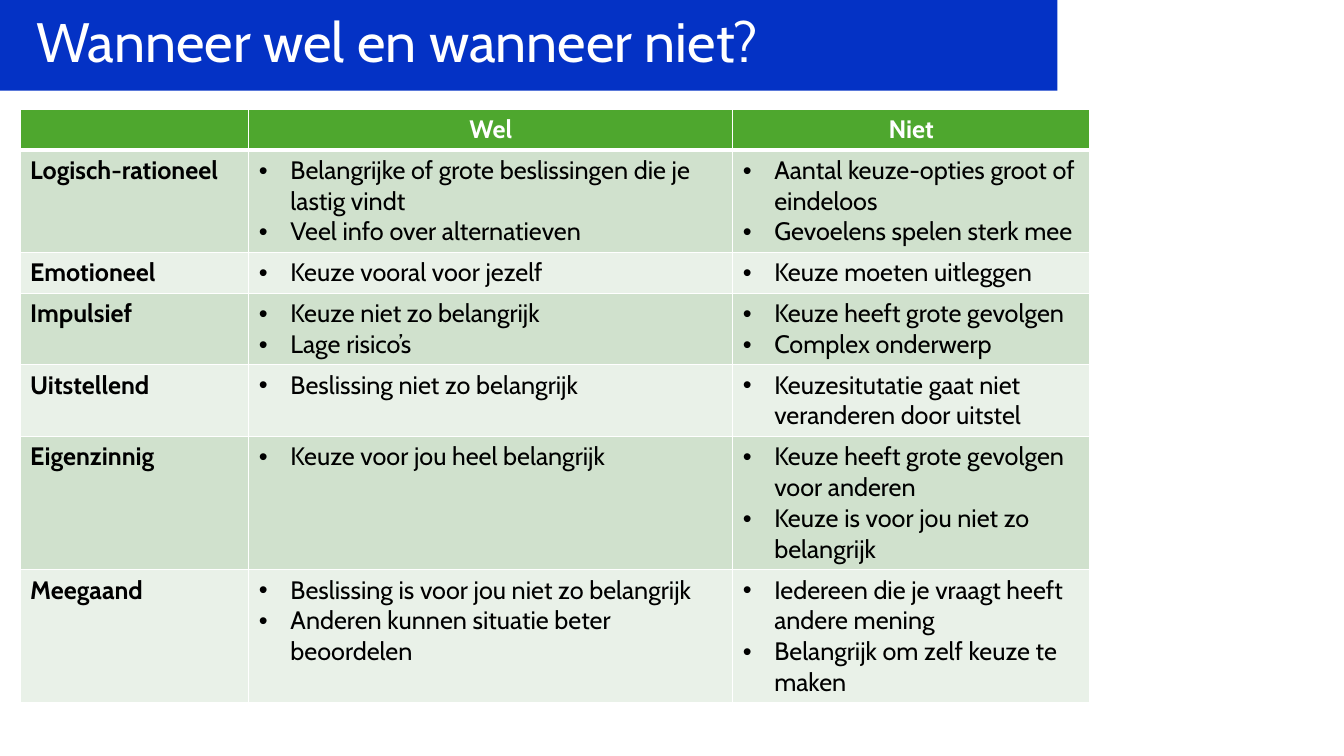
"""Build the slide on when each decision style fits and when it does not."""
from lxml.etree import SubElement
from pptx import Presentation
from pptx.dml.color import RGBColor
from pptx.enum.shapes import MSO_SHAPE as Shape
from pptx.enum.text import MSO_ANCHOR as Anchor, PP_ALIGN as Align
from pptx.oxml.ns import qn
from pptx.util import Pt

FONT = "Cabin"
COLORS = {"blue": "0432C5", "green": "4EA72E", "band": "D0E1CD",
          "pale": "E9F1E8", "white": "FFFFFF", "black": "000000"}
HEADINGS = ["", "Wel", "Niet"]
STYLES = [
    ("Logisch-rationeel",
     ["Belangrijke of grote beslissingen die je lastig vindt", "Veel info over alternatieven"],
     ["Aantal keuze-opties groot of eindeloos", "Gevoelens spelen sterk mee"]),
    ("Emotioneel", ["Keuze vooral voor jezelf"], ["Keuze moeten uitleggen"]),
    ("Impulsief",
     ["Keuze niet zo belangrijk", "Lage risico’s"],
     ["Keuze heeft grote gevolgen", "Complex onderwerp"]),
    ("Uitstellend",
     ["Beslissing niet zo belangrijk"],
     ["Keuzesitutatie gaat niet veranderen door uitstel"]),
    ("Eigenzinnig",
     ["Keuze voor jou heel belangrijk"],
     ["Keuze heeft grote gevolgen voor anderen", "Keuze is voor jou niet zo belangrijk"]),
    ("Meegaand",
     ["Beslissing is voor jou niet zo belangrijk", "Anderen kunnen situatie beter beoordelen"],
     ["Iedereen die je vraagt heeft andere mening", "Belangrijk om zelf keuze te maken"]),
]


def color(name):
    return RGBColor.from_string(COLORS[name])


def set_values(target, **values):
    for name, value in values.items():
        setattr(target, name, value)


def set_font(font, size, tint, bold=False):
    set_values(font, name=FONT, size=Pt(size), bold=bold)
    font.color.rgb = color(tint)


def add_title(page, text):
    bar = page.shapes.add_shape(Shape.RECTANGLE, Pt(0), Pt(0), Pt(755.3), Pt(64.8))
    bar.shadow.inherit = False
    bar.fill.solid()
    bar.fill.fore_color.rgb = color("blue")
    bar.line.fill.background()
    title = page.shapes.title
    bar.element.addnext(title.element)
    set_values(title, left=Pt(18.7), top=Pt(10.1), width=Pt(719.3), height=Pt(43.9))
    title.text_frame.text = text
    set_values(title.text_frame, vertical_anchor=Anchor.MIDDLE, word_wrap=True)
    para = title.text_frame.paragraphs[0]
    set_values(para, alignment=Align.LEFT, line_spacing=0.9)
    set_font(para.font, 39.6, "white")


def add_bullet(para):
    props = para._p.get_or_add_pPr()
    props.set("marL", str(Pt(22.5)))
    props.set("indent", str(-Pt(22.5)))
    SubElement(props, qn("a:buFont"), typeface="Arial")
    SubElement(props, qn("a:buChar"), char="•")


def style_cell(cell, fill, bottom=1):
    props = cell._tc.get_or_add_tcPr()
    for side, width in (("L", 1), ("R", 1), ("T", 1), ("B", bottom)):
        line = SubElement(props, qn(f"a:ln{side}"), w=str(Pt(width)))
        SubElement(SubElement(line, qn("a:solidFill")), qn("a:srgbClr"), val=COLORS["white"])
    cell.fill.solid()
    cell.fill.fore_color.rgb = color(fill)


def write_cell(cell, lines, tint="black", bold=False, bullets=False, align=Align.LEFT):
    cell.text_frame.text = "\n".join(lines)
    for para in cell.text_frame.paragraphs:
        if bullets:
            add_bullet(para)
        para.alignment = align
        set_font(para.font, 18, tint, bold)


def add_style_table(page):
    frame = page.shapes.add_table(len(STYLES) + 1, len(HEADINGS),
                                  Pt(14.4), Pt(77.9), Pt(763.9), Pt(439.9))
    table = frame.table
    for column, width in zip(table.columns, (163.4, 345.6, 254.9)):
        column.width = Pt(width)
    for row in table.rows:
        row.height = Pt(29.2)
    frame.height = Pt(439.9)
    for index, heading in enumerate(HEADINGS):
        cell = table.cell(0, index)
        style_cell(cell, "green", bottom=3)
        write_cell(cell, [heading], "white", bold=True, align=Align.CENTER)
    for number, (name, *columns) in enumerate(STYLES, 1):
        for index, lines in enumerate([[name], *columns]):
            cell = table.cell(number, index)
            style_cell(cell, "band" if number % 2 else "pale")
            write_cell(cell, lines, bold=index == 0, bullets=index > 0)


def main():
    deck = Presentation()
    set_values(deck, slide_width=Pt(960), slide_height=Pt(540))
    page = deck.slides.add_slide(deck.slide_layouts[5])
    add_title(page, "Wanneer wel en wanneer niet?")
    add_style_table(page)
    deck.save("out.pptx")


if __name__ == "__main__":
    main()
